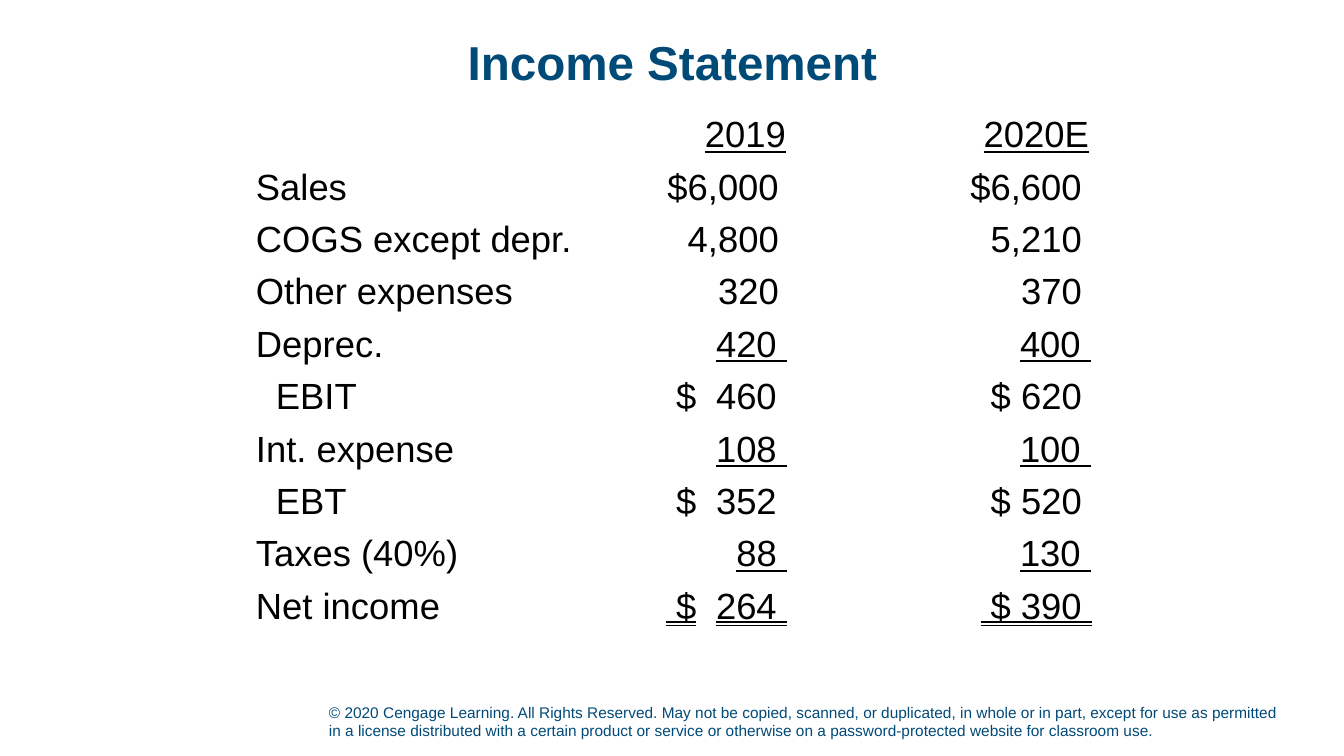
from dataclasses import dataclass

from lxml import etree
from pptx import Presentation
from pptx import util as u
from pptx.dml.color import RGBColor
from pptx.enum import text
from pptx.oxml import ns

EMU_PER_PX = 914400 / 100.8
NAVY, BLACK = "004A78", "000000"
PLAIN, SINGLE, DOUBLE = (text.MSO_UNDERLINE.NONE, text.MSO_UNDERLINE.SINGLE_LINE,
                         text.MSO_UNDERLINE.DOUBLE_LINE)
LEFT, CENTER, RIGHT = text.PP_ALIGN.LEFT, text.PP_ALIGN.CENTER, text.PP_ALIGN.RIGHT


def px(length: int) -> u.Emu:
    return u.Emu(round(length * EMU_PER_PX))


def color(hex_code: str) -> RGBColor:
    return RGBColor.from_string(hex_code)


@dataclass(frozen=True)
class Line:
    label: str
    amounts: tuple[str, str]
    underline: text.MSO_UNDERLINE = PLAIN
    indent: int = 0


@dataclass(frozen=True)
class Caption:
    words: str
    box: tuple[int, int, int, int]
    size: int
    align: text.PP_ALIGN
    anchor: text.MSO_ANCHOR
    bold: bool = False
    line_spacing: float = 1.0


@dataclass(frozen=True)
class YearColumn:
    """Where the summing rule starts in the column, and how long it is."""
    year: str
    rule_start: int
    rule_length: int


CAPTIONS = [
    Caption("© 2020 Cengage Learning. All Rights Reserved. May not be copied, scanned, or "
            "duplicated, in whole or in part, except for use as permitted in a license "
            "distributed with a certain product or service or otherwise on a "
            "password-protected website for classroom use.",
            (319, 695, 971, 50), 11, LEFT, text.MSO_ANCHOR.BOTTOM),
    Caption("Income Statement", (93, 15, 1159, 101), 34, CENTER,
            text.MSO_ANCHOR.MIDDLE, bold=True, line_spacing=0.9),
]
YEARS = [YearColumn("2019", 77, 121), YearColumn("2020E", 194, 101)]
LINES = [
    Line("Sales", ("$6,000 ", "$6,600 ")),
    Line("COGS except depr.", ("4,800 ", "5,210 ")),
    Line("Other expenses", ("320 ", "370 ")),
    Line("Deprec.", ("\t420 ", "\t400 "), SINGLE),
    Line("EBIT", (" $\t460 ", "$ 620 "), indent=20),
    Line("Int. expense", ("\t108 ", "\t100 "), SINGLE),
    Line("EBT", (" $\t352 ", "$ 520 "), indent=20),
    Line("Taxes (40%)", ("\t88 ", "\t130 "), SINGLE),
    Line("Net income", (" $\t264 ", " $ 390 "), DOUBLE),
]
COLUMN_WIDTHS = (343, 207, 303)
TABLE_LEFT, TABLE_TOP, TABLE_HEIGHT = 246, 109, 524


def style_font(font, size: int, hex_code: str) -> None:
    font.name = "Arial"
    font.size = u.Pt(size)
    font.color.rgb = color(hex_code)


def add_caption(slide, caption: Caption) -> None:
    frame = slide.shapes.add_textbox(*map(px, caption.box)).text_frame
    frame.word_wrap = True
    frame.vertical_anchor = caption.anchor
    frame.text = caption.words
    paragraph = frame.paragraphs[0]
    paragraph.alignment = caption.align
    paragraph.line_spacing = caption.line_spacing
    font = paragraph.runs[0].font
    style_font(font, caption.size, NAVY)
    font.bold = caption.bold


def fill_cell(cell, words: str, align: text.PP_ALIGN, left: int, right: int,
              underline: text.MSO_UNDERLINE = PLAIN) -> None:
    cell.margin_left, cell.margin_right = px(left), px(right)
    cell.text = words
    paragraph = cell.text_frame.paragraphs[0]
    paragraph.alignment = align
    font = paragraph.runs[0].font
    style_font(font, 26, BLACK)
    font.underline = underline


def add_right_tab(paragraph, position: int) -> None:
    properties = paragraph._p.get_or_add_pPr()
    tabs = etree.SubElement(properties, ns.qn("a:tabLst"))
    etree.SubElement(tabs, ns.qn("a:tab"), pos=str(px(position)), algn="r")


def fill_amount(cell, amount: str, column: YearColumn,
                underline: text.MSO_UNDERLINE) -> None:
    """A tabbed amount starts at the rule, so the underline spans the full rule."""
    if "\t" in amount:
        fill_cell(cell, amount, LEFT, column.rule_start, 7, underline)
        add_right_tab(cell.text_frame.paragraphs[0], column.rule_length)
    else:
        fill_cell(cell, amount, RIGHT, 7, 7, underline)


def add_statement(slide) -> None:
    row_count = len(LINES) + 1
    table = slide.shapes.add_table(
        row_count, len(COLUMN_WIDTHS), px(TABLE_LEFT), px(TABLE_TOP),
        px(sum(COLUMN_WIDTHS)), px(TABLE_HEIGHT)).table
    table.first_row = table.horz_banding = False
    for column, width in zip(table.columns, COLUMN_WIDTHS):
        column.width = px(width)
    for row in table.rows:
        row.height = u.Emu(px(TABLE_HEIGHT) // row_count)
    for cell in table.iter_cells():
        cell.fill.background()
        cell.vertical_anchor = text.MSO_ANCHOR.MIDDLE
        cell.margin_top = cell.margin_bottom = 0

    for c, column in enumerate(YEARS, start=1):
        fill_cell(table.cell(0, c), column.year, RIGHT, 10, 10, SINGLE)
    for r, line in enumerate(LINES, start=1):
        fill_cell(table.cell(r, 0), line.label, LEFT, 10 + line.indent, 10)
        for c, (column, amount) in enumerate(zip(YEARS, line.amounts), start=1):
            fill_amount(table.cell(r, c), amount, column, line.underline)


def main() -> None:
    deck = Presentation()
    deck.slide_width, deck.slide_height = px(1344), px(756)
    slide = deck.slides.add_slide(deck.slide_layouts[6])
    for caption in CAPTIONS:
        add_caption(slide, caption)
    add_statement(slide)
    deck.save("out.pptx")


if __name__ == "__main__":
    main()
